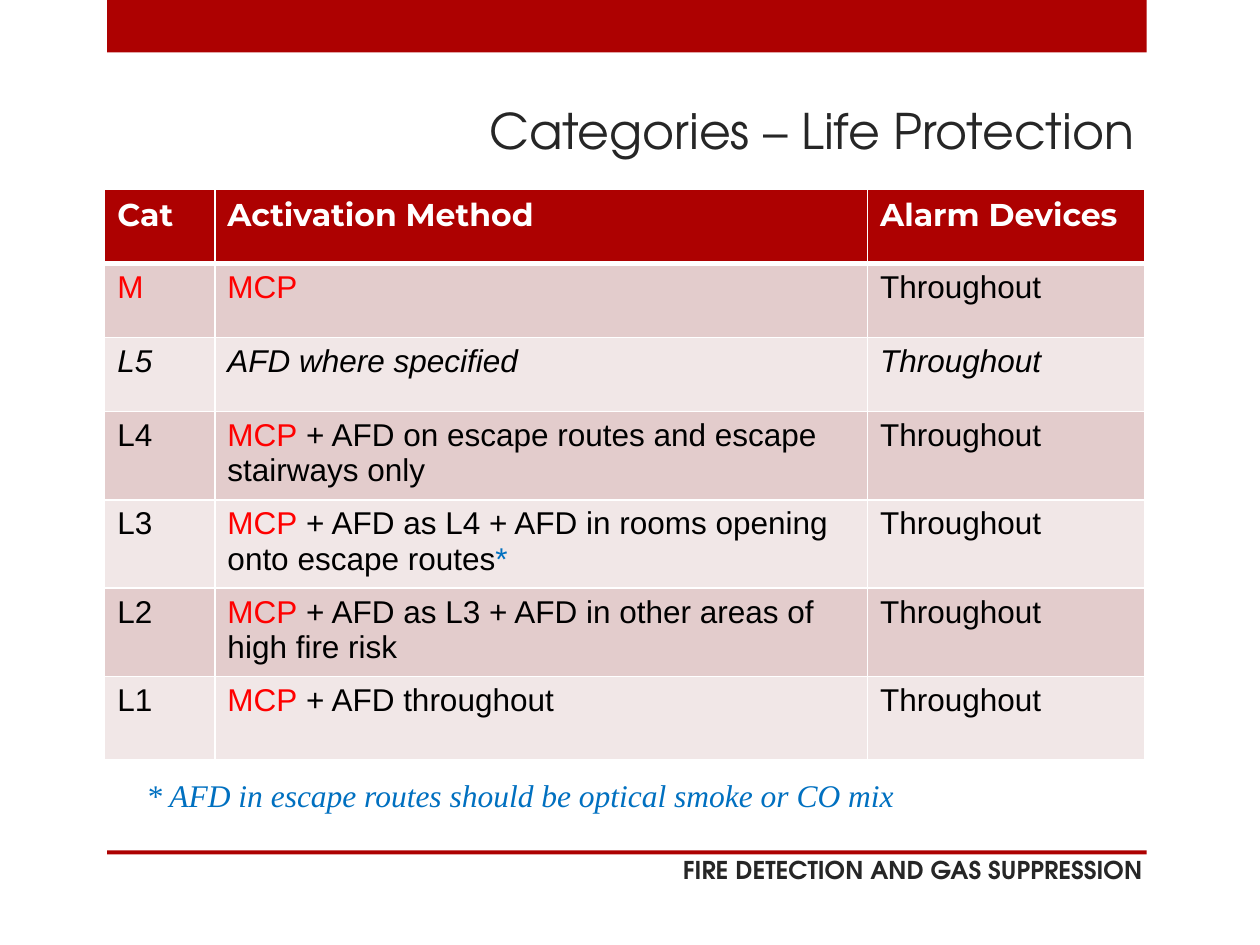
from pptx import Presentation
from pptx.dml.color import RGBColor
from pptx.enum.shapes import MSO_SHAPE as SHAPE
from pptx.enum.text import MSO_ANCHOR as ANCHOR, MSO_AUTO_SIZE as AUTO, PP_ALIGN as ALIGN
from pptx.oxml import parse_xml
from pptx.oxml.ns import nsdecls
from pptx.util import Pt

RED, BRIGHT, BLUE = "AD0101", "FF0000", "0070C0"
BLACK, DARK, WHITE = "000000", "262626", "FFFFFF"
BANDS = ("E3CCCC", "F1E7E7")

TITLE = dict(name="TeX Gyre Adventor", size=28, color=DARK)
FOOTER = dict(TITLE, size=14, bold=True)
HEAD = dict(name="Montserrat", size=18, color=WHITE, bold=True)
BODY = dict(name="Arial", size=18, color=BLACK, bold=False)
ITALIC = dict(BODY, italic=True)
MCP = ("MCP", dict(BODY, color=BRIGHT))
STAR = ("*", dict(BODY, color=BLUE))
NOTE = dict(name="Times New Roman", size=18, color=BLUE, italic=True)


def rgb(value):
    return RGBColor.from_string(value)


def body(text):
    return text, BODY


class SlideBuilder:
    def __init__(self, prs):
        self.s = prs.slides.add_slide(prs.slide_layouts[5])

    def add_runs(self, tf, runs, align=ALIGN.LEFT):
        """Fill the first paragraph with (text, format) runs."""
        p = tf.paragraphs[0]
        p.alignment = align
        for text, fmt in runs:
            r = p.add_run()
            r.text = text
            for key, value in fmt.items():
                if key == "color":
                    r.font.color.rgb = rgb(value)
                else:
                    setattr(r.font, key, Pt(value) if key == "size" else value)

    def title(self, text, left, top, width, height):
        sp = self.s.shapes.title
        sp.left, sp.top, sp.width, sp.height = map(Pt, (left, top, width, height))
        tf = sp.text_frame
        tf.auto_size, tf.vertical_anchor = AUTO.NONE, ANCHOR.TOP
        self.add_runs(tf, [(text, TITLE)], ALIGN.RIGHT)

    def bar(self, left, top, width, height):
        sp = self.s.shapes.add_shape(SHAPE.RECTANGLE, *map(Pt, (left, top, width, height)))
        sp.shadow.inherit = False
        sp.fill.solid()
        sp.fill.fore_color.rgb = rgb(RED)
        sp.line.fill.background()

    def text(self, text, fmt, left, top, width, height, align=ALIGN.LEFT, wrap=True):
        sp = self.s.shapes.add_textbox(*map(Pt, (left, top, width, height)))
        sp.text_frame.word_wrap = wrap
        self.add_runs(sp.text_frame, [(text, fmt)], align)

    def borders(self, cell, bottom=1, top=1):
        """Insert white cell borders ahead of the fill, as the schema requires."""
        sides = (("L", 1), ("R", 1), ("T", top), ("B", bottom))
        for i, (side, width) in enumerate(sides):
            ln = parse_xml(
                f'<a:ln{side} {nsdecls("a")} w="{Pt(width)}"><a:solidFill>'
                f'<a:srgbClr val="{WHITE}"/></a:solidFill></a:ln{side}>')
            cell._tc.get_or_add_tcPr().insert(i, ln)

    def table(self, rows, left, top, widths, heights):
        frame = self.s.shapes.add_table(
            len(rows), len(widths), *map(Pt, (left, top, sum(widths), sum(heights))))
        table = frame.table
        for column, width in zip(table.columns, widths):
            column.width = Pt(width)
        for i, (row, height) in enumerate(zip(rows, heights)):
            table.rows[i].height = Pt(height)
            for j, runs in enumerate(row):
                cell = table.cell(i, j)
                cell.fill.solid()
                cell.fill.fore_color.rgb = rgb(BANDS[(i - 1) % 2] if i else RED)
                self.borders(cell, bottom=1 if i else 3, top=3 if i == 1 else 1)
                self.add_runs(cell.text_frame, runs)


def main():
    prs = Presentation()
    prs.slide_width, prs.slide_height = Pt(720), Pt(540)
    b = SlideBuilder(prs)

    b.bar(61.2, 0, 594, 30)
    b.bar(61.2, 486, 594, 2.2)
    b.text("FIRE DETECTION AND GAS SUPPRESSION", FOOTER, 48.2, 485.3, 612, 28.8, ALIGN.RIGHT)
    b.title("Categories – Life Protection", 59.8, 54, 595.4, 64.8)

    header = [[(text, HEAD)] for text in ("Cat", "Activation Method", "Alarm Devices")]
    throughout = [body("Throughout")]
    rows = [
        header,
        [[("M", MCP[1])], [MCP], throughout],
        [[(text, ITALIC)] for text in ("L5", "AFD where specified", "Throughout")],
    ]
    combined = (
        ("L4", [body(" + AFD on escape routes and escape stairways only")]),
        ("L3", [body(" + AFD as L4 + AFD in rooms opening onto escape routes"), STAR]),
        ("L2", [body(" + AFD as L3 + AFD in other areas of high fire risk")]),
        ("L1", [body(" + AFD throughout")]),
    )
    rows += [[[body(cat)], [MCP, *method], throughout] for cat, method in combined]
    b.table(rows, 59.8, 108.4, (63, 373, 158.4), [42.3] * 3 + [47.5] * 4)

    b.text("* AFD in escape routes should be optical smoke or CO mix", NOTE,
           76.6, 440, 447, 29, wrap=False)
    prs.save("out.pptx")


if __name__ == "__main__":
    main()
